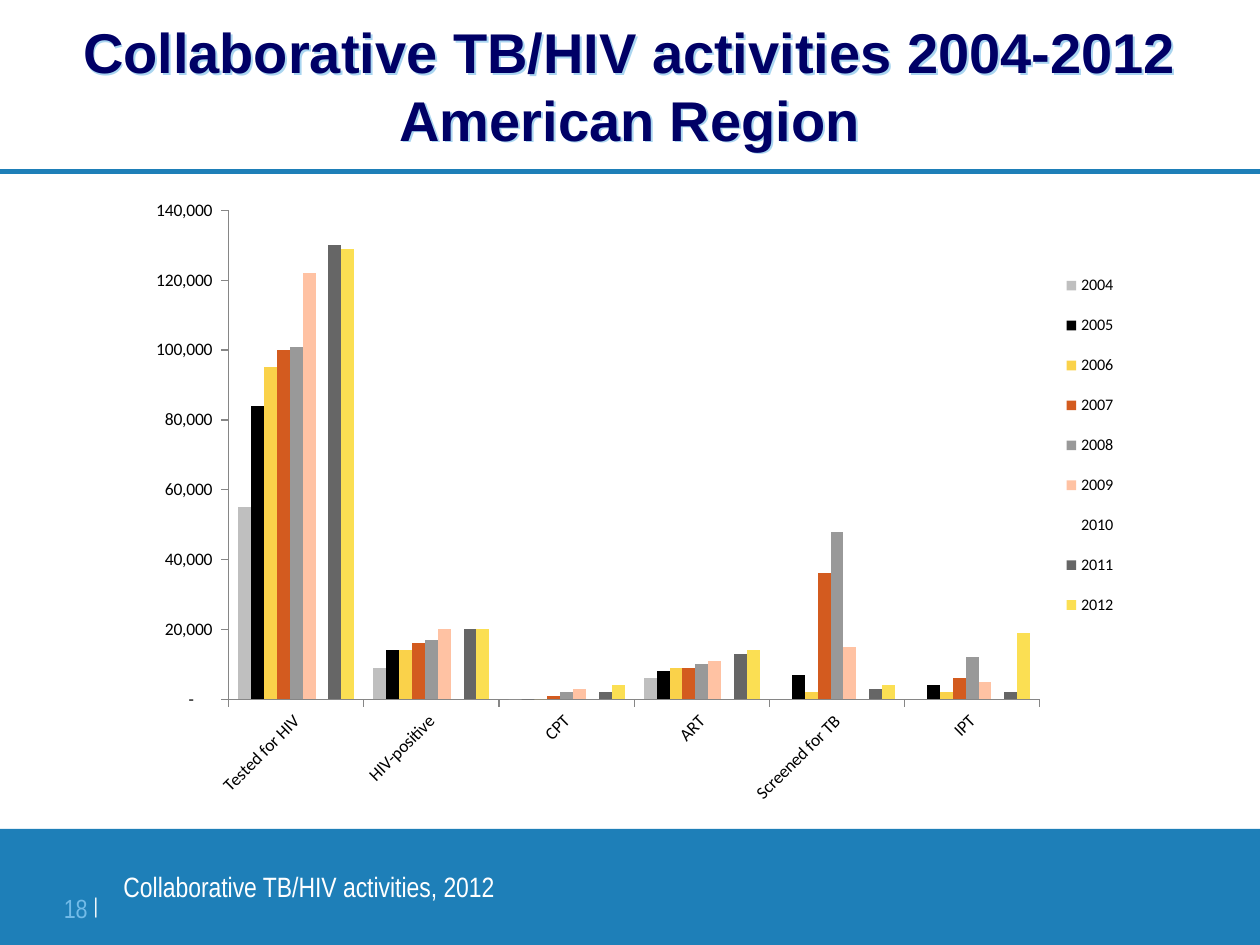
from lxml import etree
from pptx import Presentation
from pptx.chart.data import CategoryChartData
from pptx.dml.color import RGBColor
from pptx.enum.chart import XL_CHART_TYPE, XL_LEGEND_POSITION, XL_TICK_MARK
from pptx.enum.shapes import MSO_CONNECTOR, MSO_SHAPE
from pptx.enum.text import MSO_ANCHOR, PP_ALIGN
from pptx.oxml import parse_xml
from pptx.oxml.ns import nsdecls, qn
from pptx.util import Cm, Pt

COLUMN = XL_CHART_TYPE.COLUMN_CLUSTERED
KEY_RIGHT = XL_LEGEND_POSITION.RIGHT
OUT, NONE = XL_TICK_MARK.OUTSIDE, XL_TICK_MARK.NONE
STRAIGHT, RECT = MSO_CONNECTOR.STRAIGHT, MSO_SHAPE.RECTANGLE
MID, TOP = MSO_ANCHOR.MIDDLE, MSO_ANCHOR.TOP
LEFT, CENTER, RIGHT = PP_ALIGN.LEFT, PP_ALIGN.CENTER, PP_ALIGN.RIGHT

COLORS = {
    "blue": "1E7FB8", "navy": "000066", "pale": "72BBE8", "glow": "A9D5F0",
    "white": "FFFFFF", "black": "000000", "axis": "868686",
}
NARROW = "Arial Narrow"
GROUPS = ["Tested for HIV", "HIV-positive", "CPT", "ART", "Screened for TB", "IPT"]
# Year: bar colour, patients per group in thousands
YEARS = {
    "2004": ("BFBFBF", [55, 9, 0, 6, None, None]),
    "2005": ("000000", [84, 14, 0, 8, 7, 4]),
    "2006": ("FAD24A", [95, 14, 0, 9, 2, 2]),
    "2007": ("D35B1F", [100, 16, 1, 9, 36, 6]),
    "2008": ("999999", [101, 17, 2, 10, 48, 12]),
    "2009": ("FFC2A3", [122, 20, 3, 11, 15, 5]),
    "2010": ("FFFFFF", [None] * len(GROUPS)),
    "2011": ("666666", [130, 20, 2, 13, 3, 2]),
    "2012": ("FBDF53", [129, 20, 4, 14, 4, 19]),
}


def rgb(name):
    return RGBColor.from_string(COLORS.get(name, name))


def set_font(font, size, color="black", name="Calibri", bold=False):
    font.size, font.name, font.bold = Pt(size), name, bold
    font.color.rgb = rgb(color)


def write(par, text, raised=0, **style):
    """Add text to a paragraph; a newline becomes a line break."""
    for i, line in enumerate(text.split("\n")):
        if i:
            par.add_line_break()
        run = par.add_run()
        run.text = line
        set_font(run.font, **style)
        if raised:
            run.font._element.set("baseline", str(raised * 1000))


def add_glow(box):
    """Give the letters of an unfilled box a small pale shadow."""
    box._element.spPr.append(parse_xml(
        f'<a:effectLst {nsdecls("a")}>'
        '<a:outerShdw dist="20000" dir="2700000" algn="ctr" rotWithShape="0">'
        f'<a:srgbClr val="{COLORS["glow"]}"/></a:outerShdw></a:effectLst>'))


def add_box(slide, x, y, w, h, align=LEFT, anchor=TOP, glow=False):
    """Add a text box and return its first paragraph."""
    box = slide.shapes.add_textbox(Cm(x), Cm(y), Cm(w), Cm(h))
    if glow:
        add_glow(box)
    frame = box.text_frame
    frame.word_wrap, frame.vertical_anchor = True, anchor
    frame.margin_left = frame.margin_right = 0
    frame.margin_top = frame.margin_bottom = 0
    par = frame.paragraphs[0]
    par.alignment = align
    return par


def add_rule(slide, y, width):
    rule = slide.shapes.add_connector(STRAIGHT, 0, Cm(y), Cm(25.4), Cm(y))
    rule.line.color.rgb, rule.line.width = rgb("blue"), Pt(width)
    etree.SubElement(rule._element.spPr, qn("a:effectLst"))


def add_band(slide, y, h):
    band = slide.shapes.add_shape(RECT, 0, Cm(y), Cm(25.4), Cm(h))
    band.shadow.inherit = False
    band.fill.solid()
    band.fill.fore_color.rgb = rgb("blue")
    band.line.fill.background()


def make_layout(x, y, w, h, inner=False):
    """Build a fixed chart layout from fractions of the chart."""
    target = '<c:layoutTarget val="inner"/>' if inner else ""
    modes = '<c:xMode val="edge"/><c:yMode val="edge"/>'
    sides = "".join(f'<c:{k} val="{v}"/>' for k, v in zip("xywh", (x, y, w, h)))
    return parse_xml(f'<c:layout {nsdecls("c")}><c:manualLayout>'
                     f'{target}{modes}{sides}</c:manualLayout></c:layout>')


def put_layout(node, index, layout):
    for old in node.findall(qn("c:layout")):
        node.remove(old)
    node.insert(index, layout)


def style_axis(axis):
    axis.has_major_gridlines = False
    axis.major_tick_mark, axis.minor_tick_mark = OUT, NONE
    axis.format.line.color.rgb = rgb("axis")
    set_font(axis.tick_labels.font, 10)


def add_graph(slide, x, y, w, h):
    data = CategoryChartData(number_format="#,##0")
    data.categories = GROUPS
    for year, (_, vals) in YEARS.items():
        data.add_series(year, [v if v is None else v * 1000 for v in vals])
    chart = slide.shapes.add_chart(COLUMN, Cm(x), Cm(y), Cm(w), Cm(h), data).chart
    chart.has_title = False
    set_font(chart.font, 10)

    # Bars
    plot = chart.plots[0]
    plot.gap_width, plot.overlap, plot.vary_by_categories = 150, 0, False
    for bars, (color, _) in zip(plot.series, YEARS.values()):
        bars.format.fill.solid()
        bars.format.fill.fore_color.rgb = rgb(color)
        bars.invert_if_negative = False

    # Axes
    groups, scale = chart.category_axis, chart.value_axis
    style_axis(groups)
    style_axis(scale)
    groups._element.find(qn("c:txPr")).find(qn("a:bodyPr")).set("rot", "-2700000")
    scale.minimum_scale, scale.maximum_scale, scale.major_unit = 0, 140000, 20000
    scale.tick_labels.number_format = '_(* #,##0_);_(* \\(#,##0\\);_(* "-"??_);_('
    scale.tick_labels.number_format_is_linked = False

    # Legend and fixed places
    chart.has_legend = True
    key = chart.legend
    key.position, key.include_in_layout = KEY_RIGHT, False
    set_font(key.font, 9.2)
    put_layout(key._element, 1, make_layout(0.93, 0.11, 0.06, 0.6))
    area = chart._chartSpace.chart.plotArea
    put_layout(area, 0, make_layout(0.1, 0.04, 0.81, 0.77, inner=True))


def main():
    deck = Presentation()
    deck.slide_width, deck.slide_height = Cm(25.4), Cm(19.05)
    slide = deck.slides.add_slide(deck.slide_layouts[6])

    # Rule and footer
    add_rule(slide, 3.45, 3)
    add_band(slide, 16.71, 2.34)
    foot = add_box(slide, 2.49, 17.53, 11.79, 1.19)
    write(foot, "Collaborative TB/HIV activities, 2012", size=16, color="white", name=NARROW)
    page = add_box(slide, 0.99, 17.78, 0.99, 0.91, RIGHT)
    write(page, "18 ", size=15, color="pale", name=NARROW)
    write(page, "|", size=21, color="white", name=NARROW, raised=14)

    # Title
    title = add_box(slide, 0, 0, 25.4, 3.43, CENTER, MID, glow=True)
    write(title, "Collaborative TB/HIV activities 2004-2012\nAmerican Region",
          size=32, color="navy", name="Arial", bold=True)

    # Chart
    add_graph(slide, 2.59, 3.73, 20.19, 12.8)
    deck.save("out.pptx")


if __name__ == "__main__":
    main()
